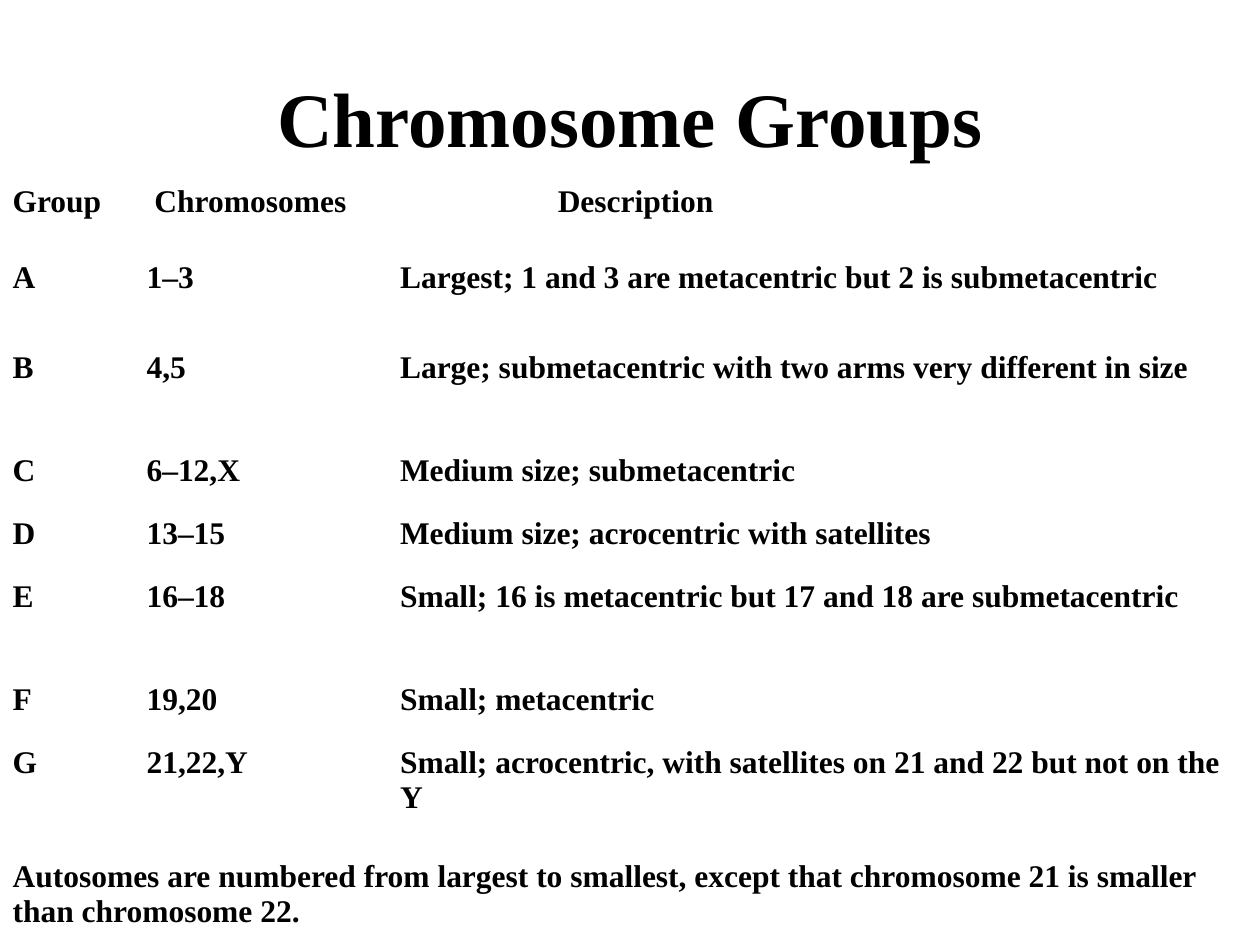
import pptx
import pptx.dml.color
import pptx.enum.text
import pptx.oxml
import pptx.oxml.ns
import pptx.util
from dataclasses import dataclass

Cm, Pt = pptx.util.Cm, pptx.util.Pt
ALIGN, ANCHOR = pptx.enum.text.PP_ALIGN, pptx.enum.text.MSO_ANCHOR


@dataclass(frozen=True)
class Theme:
    font: str = "Times New Roman"
    ink: str = "000000"
    rule: str = "FFFFFF"
    title_size: float = 44
    body_size: float = 18
    rule_width: float = 1


def write(frame, text, *, theme, size, align=ALIGN.LEFT, indent=0, first_line=0):
    """Put one formatted paragraph in a text frame; indents are in cm."""
    frame.word_wrap = True
    paragraph = frame.paragraphs[0]
    paragraph.alignment = align
    if indent or first_line:
        properties = paragraph._p.get_or_add_pPr()
        properties.set("marL", str(Cm(indent)))
        properties.set("indent", str(Cm(first_line)))
    run = paragraph.add_run()
    run.text = text
    run.font.name = theme.font
    run.font.size = Pt(size)
    run.font.bold = True
    run.font.color.rgb = pptx.dml.color.RGBColor.from_string(theme.ink)


class SlideBuilder:
    def __init__(self, deck, theme):
        self.theme = theme
        self.slide = deck.slides.add_slide(deck.slide_layouts.get_by_name("Title Only"))

    def title(self, text, left, top, width, height):
        heading = self.slide.shapes.title
        heading.left, heading.top = Cm(left), Cm(top)
        heading.width, heading.height = Cm(width), Cm(height)
        heading.text_frame.vertical_anchor = ANCHOR.MIDDLE
        write(heading.text_frame, text, theme=self.theme,
              size=self.theme.title_size, align=ALIGN.CENTER)

    def table(self, rows, left, top, widths, heights, indents, footnote):
        last = len(rows)
        table = self.slide.shapes.add_table(
            last + 1, len(widths), Cm(left), Cm(top),
            Cm(sum(widths)), Cm(sum(heights))).table
        table.first_row = table.horz_banding = False
        for column, width in zip(table.columns, widths):
            column.width = Cm(width)
        for row, height in zip(table.rows, heights):
            row.height = Cm(height)
        for cell in table.iter_cells():
            self.style_cell(cell)

        for r, row in enumerate(rows):
            for c, text in enumerate(row):
                write(table.cell(r, c).text_frame, text, theme=self.theme,
                      size=self.theme.body_size, **indents.get((r, c), {}))

        # Footnote across the full width
        note = table.cell(last, 0)
        note.merge(table.cell(last, len(widths) - 1))
        note.vertical_anchor = ANCHOR.MIDDLE
        write(note.text_frame, footnote, theme=self.theme, size=self.theme.body_size)

    def style_cell(self, cell):
        """Border lines come before the fill in the cell properties."""
        properties = cell._tc.get_or_add_tcPr()
        for side in ("lnL", "lnR", "lnT", "lnB"):
            properties.append(pptx.oxml.parse_xml(
                f'<a:{side} {pptx.oxml.ns.nsdecls("a")} w="{Pt(self.theme.rule_width)}">'
                f'<a:solidFill><a:srgbClr val="{self.theme.rule}"/></a:solidFill></a:{side}>'))
        cell.fill.background()


GROUPS = [
    ("Group", "Chromosomes", "Description"),
    ("A", "1–3", "Largest; 1 and 3 are metacentric but 2 is submetacentric"),
    ("B", "4,5", "Large; submetacentric with two arms very different in size"),
    ("C", "6–12,X", "Medium size; submetacentric"),
    ("D", "13–15", "Medium size; acrocentric with satellites"),
    ("E", "16–18", "Small; 16 is metacentric but 17 and 18 are submetacentric"),
    ("F", "19,20", "Small; metacentric"),
    ("G", "21,22,Y", "Small; acrocentric, with satellites on 21 and 22 but not on the Y"),
]
FOOTNOTE = ("Autosomes are numbered from largest to smallest, "
            "except that chromosome 21 is smaller than chromosome 22.")
SHORT, TALL = 1.27, 2.08
ROW_HEIGHTS = [1.55, 1.8, TALL, SHORT, SHORT, TALL, SHORT, TALL, TALL]
COLUMN_WIDTHS = [2.7, 5.11, 17.59]
# Header offsets and the hanging indent, by (row, column)
INDENTS = {
    (0, 1): {"indent": 0.16},
    (0, 2): {"indent": 3.18},
    (1, 1): {"indent": 0.74, "first_line": -0.74},
}


def main():
    deck = pptx.Presentation()
    deck.slide_width, deck.slide_height = Cm(25.4), Cm(19.05)
    chromosomes = SlideBuilder(deck, Theme())

    # Heading
    chromosomes.title("Chromosome Groups", 1.27, 0.76, 22.86, 3.18)

    # Chromosome group table
    chromosomes.table(GROUPS, 0, 3.58, COLUMN_WIDTHS, ROW_HEIGHTS, INDENTS, FOOTNOTE)

    deck.save("out.pptx")


if __name__ == "__main__":
    main()
